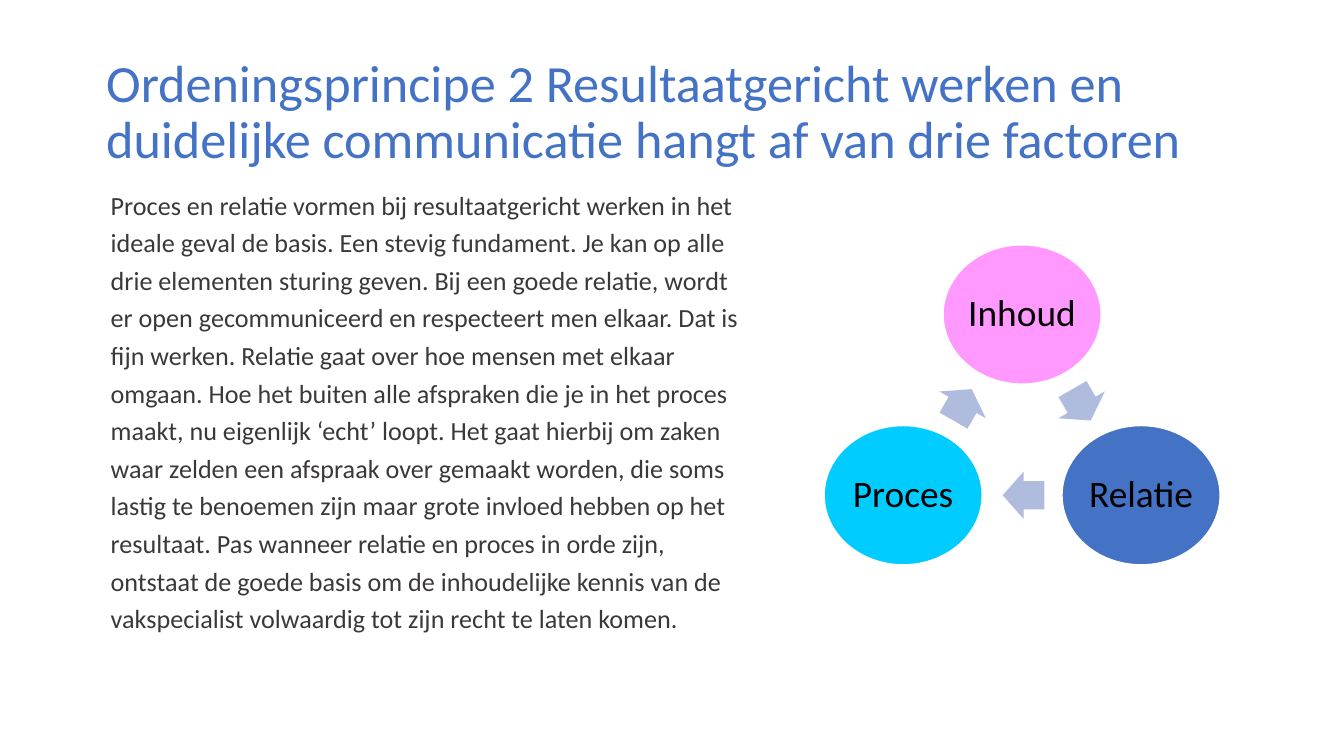
from pptx import Presentation
from pptx.dml.color import RGBColor
from pptx.enum.shapes import MSO_SHAPE
from pptx.enum.text import MSO_ANCHOR, MSO_AUTO_SIZE, PP_ALIGN
from pptx.util import Pt

OVAL, ARROW = MSO_SHAPE.OVAL, MSO_SHAPE.RIGHT_ARROW
LEFT, CENTER = PP_ALIGN.LEFT, PP_ALIGN.CENTER
MIDDLE, NO_FIT = MSO_ANCHOR.MIDDLE, MSO_AUTO_SIZE.NONE
EMU_PER_PX = 4572
FONT = "Calibri"
TITLE_ONLY = 5
COLORS = {
    "title": "4472C4", "body": "3B3838", "label": "000000", "outline": "FFFFFF",
    "inhoud": "FF99FF", "relatie": "4472C4", "proces": "00CCFF", "arrow": "B0BCDE",
}
TITLE = (
    "Ordeningsprincipe 2 Resultaatgericht werken en duidelijke communicatie "
    "hangt af van drie factoren"
)
BODY = (
    "Proces en relatie vormen bij resultaatgericht werken in het ideale geval de basis. "
    "Een stevig fundament. Je kan op alle drie elementen sturing geven. "
    "Bij een goede relatie, wordt er open gecommuniceerd en respecteert men elkaar. "
    "Dat is fijn werken. Relatie gaat over hoe mensen met elkaar omgaan. "
    "Hoe het buiten alle afspraken die je in het proces maakt, nu eigenlijk ‘echt’ loopt. "
    "Het gaat hierbij om zaken waar zelden een afspraak over gemaakt worden, "
    "die soms lastig te benoemen zijn maar grote invloed hebben op het resultaat. "
    "Pas wanneer relatie en proces in orde zijn, ontstaat de goede basis om de "
    "inhoudelijke kennis van de vakspecialist volwaardig tot zijn recht te laten komen."
)


def px(*lengths):
    """Turn px lengths into EMU."""
    return [round(length * EMU_PER_PX) for length in lengths]


def color(name):
    """Return a named colour."""
    return RGBColor.from_string(COLORS[name])


def write(shape, text, size, color_name, alignment, line_spacing):
    """Write one formatted paragraph into a shape."""
    frame = shape.text_frame
    frame.text = text
    paragraph = frame.paragraphs[0]
    paragraph.alignment = alignment
    paragraph.line_spacing = line_spacing
    paragraph.font.name = FONT
    paragraph.font.size = Pt(size)
    paragraph.font.color.rgb = color(color_name)
    return frame


def place_title(slide, box):
    """Move the title placeholder to the box and fill it."""
    title = slide.shapes.title
    title.left, title.top, title.width, title.height = px(*box)
    frame = write(title, TITLE, 28, "title", LEFT, 0.9)
    frame.word_wrap = True
    frame.auto_size = NO_FIT
    frame.vertical_anchor = MIDDLE


def add_body(slide, box):
    """Add the explanation text in the box."""
    frame = write(slide.shapes.add_textbox(*px(*box)), BODY, 14, "body", LEFT, 1.2)
    frame.word_wrap = True


def add_centered(group, kind, center, size, fill):
    """Add a filled preset shape around a centre point."""
    (x, y), (width, height) = center, size
    shape = group.shapes.add_shape(kind, *px(x - width / 2, y - height / 2, width, height))
    shape.shadow.inherit = False
    shape.fill.solid()
    shape.fill.fore_color.rgb = color(fill)
    return shape


def add_factor(group, label, center, size):
    """Add one labelled oval of the cycle."""
    oval = add_centered(group, OVAL, center, size, label.lower())
    oval.line.color.rgb = color("outline")
    oval.line.width = Pt(1)
    frame = write(oval, label, 20, "label", CENTER, 0.9)
    frame.word_wrap = False
    frame.vertical_anchor = MIDDLE
    frame.margin_left = frame.margin_right = frame.margin_top = frame.margin_bottom = 0


def add_arrow(group, center, size, rotation):
    """Add one arrow between two factors."""
    arrow = add_centered(group, ARROW, center, size, "arrow")
    arrow.line.fill.background()
    arrow.adjustments[0] = 0.6
    arrow.adjustments[1] = 0.5
    arrow.rotation = rotation


def add_cycle(slide, box):
    """Add the three factors in a triangle with arrows between them."""
    left, top, width, height = box
    group = slide.shapes.add_group_shape()
    oval_width, oval_height = oval_size = (236, 208)
    middle = left + width / 2
    offset = (width - oval_width) / 2
    upper, lower = top + oval_height / 2, top + height - oval_height / 2
    side_y = (upper + lower) / 2
    side_offset = offset / 2
    add_factor(group, "Inhoud", (middle, upper), oval_size)
    add_arrow(group, (middle + side_offset, side_y), (54, 80), 60)
    add_factor(group, "Relatie", (middle + offset, lower), oval_size)
    add_arrow(group, (middle + 2, lower), (62, 70), 180)
    add_factor(group, "Proces", (middle - offset, lower), oval_size)
    add_arrow(group, (middle - side_offset, side_y), (54, 80), 300)


def main():
    """Build and save the presentation."""
    presentation = Presentation()
    presentation.slide_width, presentation.slide_height = px(2000, 1125)
    slide = presentation.slides.add_slide(presentation.slide_layouts[TITLE_ONLY])
    place_title(slide, (138, 60, 1724, 218))
    add_body(slide, (145, 262, 976, 602))
    add_cycle(slide, (1226, 364, 590, 477))
    presentation.save("out.pptx")


if __name__ == "__main__":
    main()
